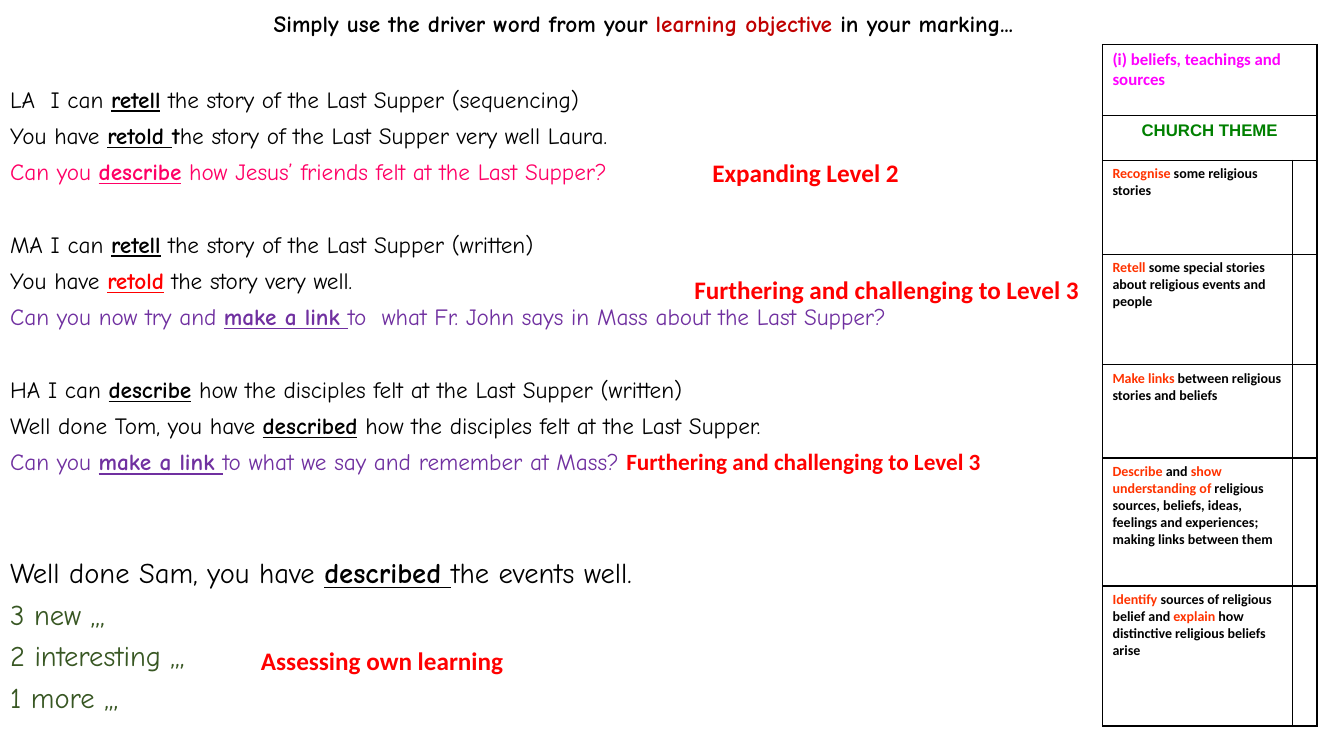
from pptx import Presentation
from pptx.dml.color import RGBColor
from pptx.enum.text import MSO_ANCHOR, MSO_AUTO_SIZE, PP_ALIGN
from pptx.oxml.xmlchemy import OxmlElement
from pptx.util import Pt

CENTER, LEFT = PP_ALIGN.CENTER, PP_ALIGN.LEFT
TOP = MSO_ANCHOR.TOP
NO_FIT, GROW = MSO_AUTO_SIZE.NONE, MSO_AUTO_SIZE.SHAPE_TO_FIT_TEXT

COLORS = {
    "black": "000000", "dark red": "C00000", "pink": "FF0066", "red": "FF0000",
    "purple": "7030A0", "green": "385723", "magenta": "FF00FF",
    "theme green": "008000", "orange": "FF3300",
}
HAND, PLAIN, THEME = "Comic Neue", "Calibri", "Arial"
LINE_GAP = 10
BLANK_LINE = 25.9
INDENT = 18


class MarkingSlide:
    """Holds the text style and the current page."""

    def __init__(self, deck):
        self.page = deck.slides.add_slide(deck.slide_layouts[1])

    def add_spans(self, para, spans, size, font, color="black", bold=False):
        """Each span is (text, overrides)."""
        for text, style in spans:
            span = para.add_run()
            span.text = text
            span.font.name = style.get("font", font)
            span.font.size = Pt(size)
            span.font.bold = style.get("bold", bold)
            span.font.underline = style.get("underline", False)
            span.font.color.rgb = RGBColor.from_string(COLORS[style.get("color", color)])

    def place(self, box, left, top, width, height):
        box.left, box.top, box.width, box.height = Pt(left), Pt(top), Pt(width), Pt(height)
        frame = box.text_frame
        frame.word_wrap, frame.auto_size, frame.vertical_anchor = True, NO_FIT, TOP
        return frame

    def title(self, spans, *area):
        para = self.place(self.page.shapes.title, *area).paragraphs[0]
        para.alignment, para.line_spacing = CENTER, 0.8
        self.add_spans(para, spans, 16.6, HAND, bold=True)

    def body(self, lines, *area):
        """Each line is (blank lines above, size, colour, spans)."""
        frame = self.place(self.page.placeholders[1], *area)
        for number, (blanks, size, color, spans) in enumerate(lines):
            para = frame.add_paragraph() if number else frame.paragraphs[0]
            para.alignment, para.line_spacing = LEFT, 0.8
            para.space_before = Pt(LINE_GAP + blanks * BLANK_LINE)
            properties = para._p.get_or_add_pPr()
            properties.set("marL", str(Pt(INDENT)))
            properties.set("indent", str(-Pt(INDENT)))
            properties.append(OxmlElement("a:buNone"))
            self.add_spans(para, spans, size, HAND, color)

    def label(self, text, left, top, width, wrap=True):
        box = self.page.shapes.add_textbox(Pt(left), Pt(top), Pt(width), Pt(28.8))
        frame = box.text_frame
        frame.word_wrap, frame.auto_size = wrap, GROW
        self.add_spans(frame.paragraphs[0], [(text, {})], 18, PLAIN, "red", True)

    def border(self, cell):
        properties = cell._tc.get_or_add_tcPr()
        for position, side in enumerate(("a:lnL", "a:lnR", "a:lnT", "a:lnB")):
            line = OxmlElement(side)
            line.set("w", str(Pt(1)))
            fill, color = OxmlElement("a:solidFill"), OxmlElement("a:srgbClr")
            color.set("val", COLORS["black"])
            fill.append(color)
            line.append(fill)
            properties.insert(position, line)

    def table(self, rows, left, top, widths, heights):
        """Each row is (font, size, alignment, spans, merged)."""
        table = self.page.shapes.add_table(
            len(rows), len(widths), Pt(left), Pt(top), Pt(sum(widths)), Pt(sum(heights))).table
        table.first_row = table.horz_banding = False
        for column, width in zip(table.columns, widths):
            column.width = Pt(width)
        for number, (font, size, alignment, spans, merged) in enumerate(rows):
            table.rows[number].height = Pt(heights[number])
            for cell in table.rows[number].cells:
                cell.fill.background()
                self.border(cell)
            first = table.cell(number, 0)
            if merged:
                first.merge(table.cell(number, 1))
            para = first.text_frame.paragraphs[0]
            para.alignment = alignment
            self.add_spans(para, spans, size, font, bold=True)


def plain(text):
    return text, {}


def driver(text, **style):
    return text, {"bold": True, "underline": True, **style}


def tinted(text, color):
    return text, {"color": color}


def level(*spans):
    return PLAIN, 10, LEFT, spans, False


def main():
    deck = Presentation()
    deck.slide_width, deck.slide_height = Pt(960), Pt(540)
    slide = MarkingSlide(deck)

    # Heading
    slide.title([plain("Simply use the driver word from your "),
                 tinted("learning objective ", "dark red"),
                 plain("in your marking...")], 3.8, 6.8, 911.5, 28)

    # Marking examples for each ability group
    small, large = 16.6, 20.4
    slide.body([
        (0, small, "black", [plain("LA  I can "), driver("retell"),
                             plain(" the story of the Last Supper (sequencing)")]),
        (0, small, "black", [plain("You have "), driver("retold "), ("t", {"bold": True}),
                             plain("he story of the Last Supper very well Laura.")]),
        (0, small, "pink", [plain("Can you "), driver("describe"),
                            plain(" how Jesus’ friends felt at the Last Supper?")]),
        (1, small, "black", [plain("MA I can "), driver("retell"),
                             plain(" the story of the Last Supper (written)")]),
        (0, small, "black", [plain("You have "), driver("retold", color="red"),
                             plain(" the story very well.")]),
        (0, small, "purple", [plain("Can you now try and "), driver("make a link "),
                              plain("to  what Fr. John says in Mass about the Last Supper?")]),
        (1, small, "black", [plain("HA I can "), driver("describe"),
                             plain(" how the disciples felt at the Last Supper (written)")]),
        (0, small, "black", [plain("Well done Tom, you have "), driver("described"),
                             plain(" how the disciples felt at the Last Supper.")]),
        (0, small, "purple", [plain("Can you "), driver("make a link "),
                              plain("to what we say and remember at Mass? "),
                              ("Furthering and challenging to Level 3",
                               {"font": PLAIN, "color": "red", "bold": True})]),
        (2, large, "black", [plain("Well done Sam, you have "), driver("described "),
                             plain("the events well.")]),
        (0, large, "green", [plain("3 new ,,,")]),
        (0, large, "green", [plain("2 interesting ,,,")]),
        (0, large, "green", [plain("1 more ,,,")]),
    ], 0, 60.8, 911.5, 460.5)

    # Level labels
    slide.label("Expanding Level 2", 501.8, 108.7, 148.3, wrap=False)
    slide.label("Furthering and challenging to Level 3", 488.9, 192.2, 294.5)

    # Levels of attainment
    slide.table([
        (PLAIN, 12, LEFT, [tinted("(i) beliefs, teachings and sources", "magenta")], True),
        (THEME, 12, CENTER, [tinted("CHURCH THEME", "theme green")], True),
        level(tinted("Recognise", "orange"), plain(" some religious stories")),
        level(tinted("Retell", "orange"),
              plain(" some special stories about religious events and people")),
        level(tinted("Make links", "orange"), plain(" between religious stories and beliefs")),
        level(tinted("Describe", "orange"), plain(" and "),
              tinted("show understanding of", "orange"),
              plain(" religious sources, beliefs, ideas, feelings and experiences; "
                    "making links between them")),
        level(tinted("Identify", "orange"), plain(" sources of religious belief and "),
              tinted("explain", "orange"), plain(" how distinctive religious beliefs arise")),
    ], 787.5, 31.7, [136, 17], [51, 32, 67, 79, 66.5, 91.5, 100])

    # Pupil self-assessment
    slide.label("Assessing own learning", 179.3, 457.2, 294.5)

    deck.save("out.pptx")


if __name__ == "__main__":
    main()
